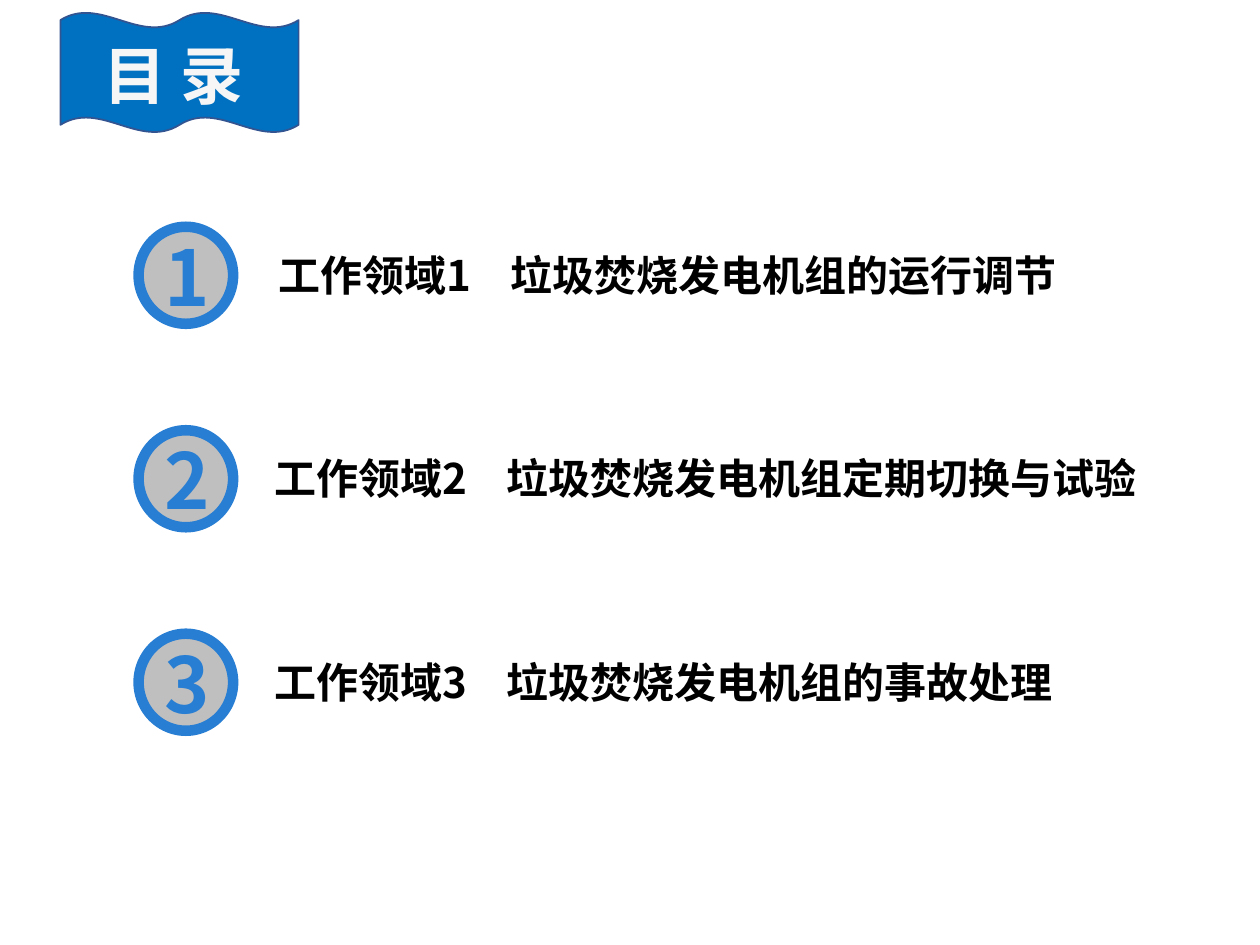
from lxml import etree
from pptx import Presentation
from pptx.dml.color import RGBColor
from pptx.enum.shapes import MSO_SHAPE
from pptx.enum.text import MSO_ANCHOR, MSO_AUTO_SIZE, PP_ALIGN
from pptx.oxml.ns import qn
from pptx.util import Inches, Pt

FONT = "Noto Sans CJK SC"
BLACK = RGBColor(0x00, 0x00, 0x00)
OFF_WHITE = RGBColor(0xF6, 0xF6, 0xF6)
GRAY = RGBColor(0xBF, 0xBF, 0xBF)
RING_BLUE = RGBColor(0x28, 0x7E, 0xD3)
BANNER_BLUE = RGBColor(0x00, 0x70, 0xC0)
BANNER_EDGE = RGBColor(0x32, 0x54, 0x91)


def write_text(shape, text, size, color, align=PP_ALIGN.LEFT, anchor=MSO_ANCHOR.TOP, tab=None):
    """Fill the shape with one bold paragraph; tab is an optional tab stop."""
    frame = shape.text_frame
    frame.word_wrap = True
    frame.auto_size = MSO_AUTO_SIZE.NONE
    frame.vertical_anchor = anchor
    paragraph = frame.paragraphs[0]
    paragraph.alignment = align
    if tab is not None:
        tab_list = etree.SubElement(paragraph._p.get_or_add_pPr(), qn("a:tabLst"))
        etree.SubElement(tab_list, qn("a:tab"), pos=str(tab), algn="l")
    run = paragraph.add_run()
    run.text = text
    run.font.size = Pt(size)
    run.font.bold = True
    run.font.color.rgb = color
    run.font.name = FONT
    etree.SubElement(run.font._element, qn("a:ea"), typeface=FONT)


def add_filled_shape(kind, left, top, width, height, fill, line, line_width):
    shape = slide.shapes.add_shape(kind, Inches(left), Inches(top), Inches(width), Inches(height))
    shape.shadow.inherit = False
    shape.fill.solid()
    shape.fill.fore_color.rgb = fill
    shape.line.color.rgb = line
    shape.line.width = Pt(line_width)
    return shape


presentation = Presentation()
presentation.slide_width = Inches(10)
presentation.slide_height = Inches(7.5)
slide = presentation.slides.add_slide(presentation.slide_layouts[5])

# Numbered topics
topics = [
    (2.11, "垃圾焚烧发电机组的运行调节"),
    (2.08, "垃圾焚烧发电机组定期切换与试验"),
    (2.08, "垃圾焚烧发电机组的事故处理"),
]
for index, (left, topic) in enumerate(topics):
    number = index + 1
    top = 1.8 + 1.615 * index
    circle = add_filled_shape(MSO_SHAPE.OVAL, 1.1, top, 0.75, 0.77, GRAY, RING_BLUE, 6)
    write_text(circle, str(number), 44, RING_BLUE, align=PP_ALIGN.CENTER, anchor=MSO_ANCHOR.MIDDLE)
    label = slide.shapes.add_textbox(Inches(left), Inches(top + 0.13), Inches(7.08), Inches(0.5))
    write_text(label, f"工作领域{number}\t{topic}", 24, BLACK, tab=Inches(1.84))

# Banner with the slide title in front of it
add_filled_shape(MSO_SHAPE.DOUBLE_WAVE, 0.48, 0.1, 1.89, 0.95, BANNER_BLUE, BANNER_EDGE, 1)
title = slide.shapes.title
title.left, title.top = Inches(0.72), Inches(0.24)
title.width, title.height = Inches(1.39), Inches(0.71)
write_text(title, "目 录", 36, OFF_WHITE)
slide.shapes.element.append(title.element)

presentation.save("out.pptx")
